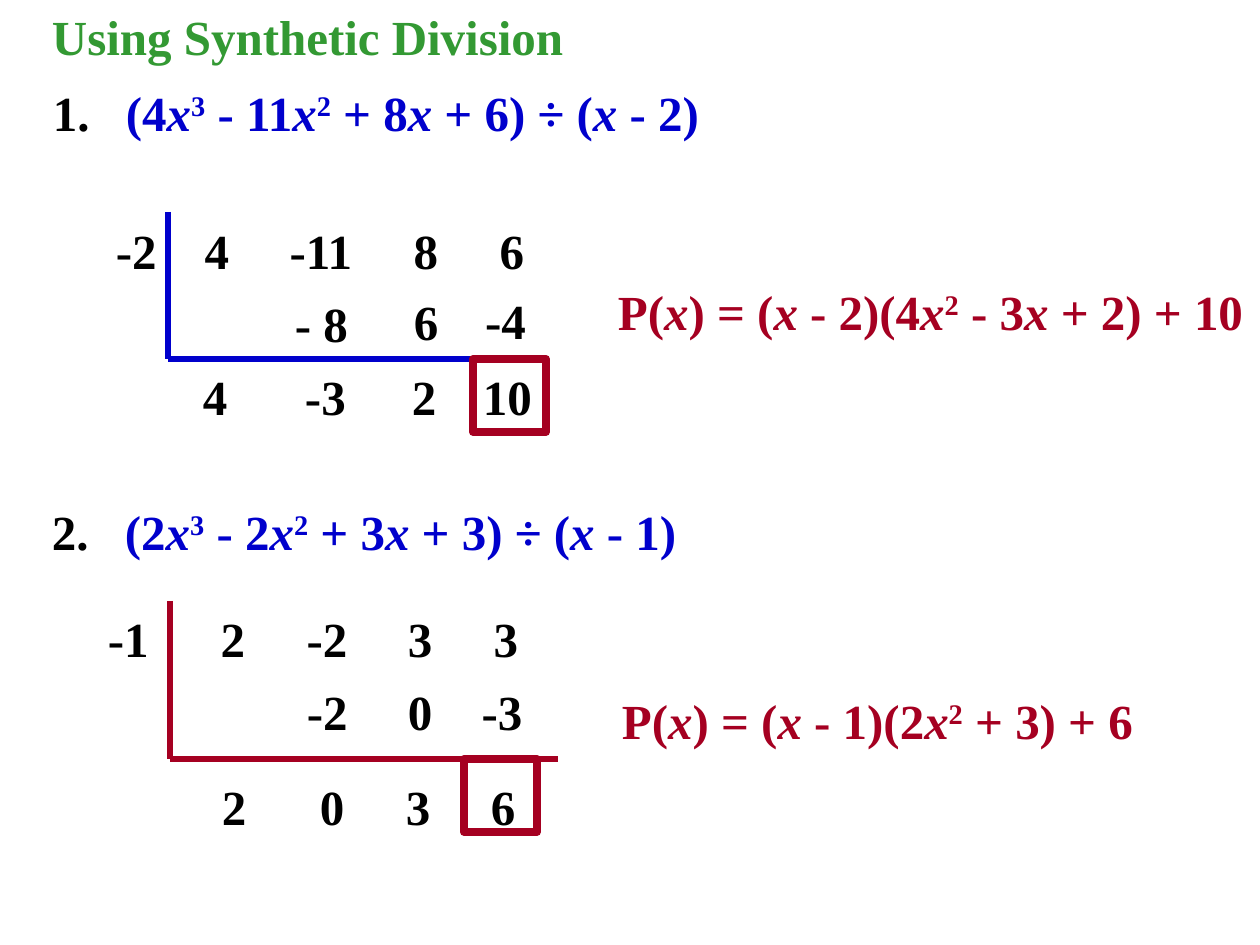
from dataclasses import dataclass
from itertools import groupby
from lxml.etree import SubElement
from pptx import Presentation
from pptx.dml.color import RGBColor
from pptx.enum.shapes import MSO_CONNECTOR, MSO_SHAPE
from pptx.enum.text import MSO_ANCHOR, MSO_AUTO_SIZE, PP_ALIGN
from pptx.oxml.ns import qn
from pptx.util import Pt

SCALE = 914400 / 126  # EMU in one px
PAD = 13              # left inset of text, px
LINE = 72             # height of a one-line text, px
SUPER = {"²": "2", "³": "3"}


@dataclass(frozen=True)
class Theme:
    font: str = "Times New Roman"
    size: int = 28
    black: RGBColor = RGBColor(0x00, 0x00, 0x00)
    blue: RGBColor = RGBColor(0x00, 0x00, 0xCC)
    red: RGBColor = RGBColor(0xA5, 0x00, 0x21)
    green: RGBColor = RGBColor(0x33, 0x99, 0x33)
    rule: float = 3
    frame: float = 4.5


THEME = Theme()


def px(*nums):
    return [round(n * SCALE) for n in nums]


def style(run, color):
    font = run.font
    font.name, font.size, font.bold = THEME.font, Pt(THEME.size), True
    font.color.rgb = color


def setup(frame):
    frame.word_wrap = True
    frame.auto_size = MSO_AUTO_SIZE.NONE
    frame.vertical_anchor = MSO_ANCHOR.TOP
    frame.margin_left, frame.margin_right = px(PAD, 0)
    frame.margin_top = frame.margin_bottom = px(6)[0]


def textbox(slide, left, top, width):
    frame = slide.shapes.add_textbox(*px(left, top, width, LINE)).text_frame
    setup(frame)
    return frame.paragraphs[0]


def add_tabs(para, stops, align):
    tabs = SubElement(para._p.get_or_add_pPr(), qn("a:tabLst"))
    for stop in stops:
        SubElement(tabs, qn("a:tab"), pos=str(px(stop)[0]), algn=align)


def add_math(para, text, color):
    """Set x in italics and raise the powers."""
    def kind(char):
        return "power" if char in SUPER else "var" if char == "x" else "plain"

    for name, chars in groupby(text, kind):
        run = para.add_run()
        run.text = "".join(SUPER.get(char, char) for char in chars)
        style(run, color)
        run.font.italic = name == "var"
        if name == "power":
            run.font._element.set("baseline", "30000")


def add_line(slide, ends, color):
    line = slide.shapes.add_connector(MSO_CONNECTOR.STRAIGHT, *px(*ends))
    line.line.color.rgb = color
    line.line.width = Pt(THEME.rule)
    SubElement(line._element.spPr, qn("a:effectLst"))


def add_title(slide, text, left, top, width):
    title = slide.shapes.title
    title.left, title.top, title.width, title.height = px(left, top, width, LINE)
    frame = title.text_frame
    setup(frame)
    frame.text = text
    para = frame.paragraphs[0]
    para.alignment = PP_ALIGN.LEFT
    para.line_spacing = 1
    para.space_before = Pt(0)
    style(para.runs[0], THEME.green)


def add_task(slide, box, number, text):
    para = textbox(slide, *box)
    add_tabs(para, [73], "l")
    add_math(para, number + "\t", THEME.black)
    add_math(para, text, THEME.blue)


def add_answer(slide, box, text):
    add_math(textbox(slide, *box), text, THEME.red)


def add_row(slide, x, y, row):
    """First value starts the row; the others are centred on their columns."""
    left, top, width, values, *cols = row
    para = textbox(slide, x + left, y + top, width)
    para.text = "\t".join(values.split("|"))
    if cols:
        add_tabs(para, [col - left - PAD for col in cols], "ctr")
    for run in para.runs:
        style(run, THEME.black)


def add_division(slide, box, color, rows, rest):
    """Division bracket, its numbers and the framed remainder."""
    x, y, width, height = box
    foot = y + height
    add_line(slide, (x, y, x, foot), color)
    add_line(slide, (x, foot, x + width, foot), color)
    for row in rows:
        add_row(slide, x, y, row)
    frame = slide.shapes.add_shape(MSO_SHAPE.RECTANGLE, *px(x + rest, foot, 73, 73))
    frame.shadow.inherit = False
    frame.fill.background()
    frame.line.color.rgb = THEME.red
    frame.line.width = Pt(THEME.frame)


# Rows: left, top, width, values, column centres (px from the bracket's corner)
ROWS_1 = [
    (-65, 2, 438, "-2|4|-11|8|6", 49, 153, 258, 344),
    (114, 75, 78, "- 8"), (233, 74, 50, "6"), (304, 72, 67, "-4"),
    (22, 148, 50, "4"), (124, 148, 67, "-3"),
    (231, 148, 50, "2"), (302, 148, 74, "10"),
]
ROWS_2 = [
    (-75, 1, 438, "-1|2|-2|3|3", 63, 157, 250, 336),
    (124, 74, 242, "-2|0|-3", 250, 332),
    (39, 169, 319, "2|0|3|6", 162, 248, 333),
]


def main():
    deck = Presentation()
    deck.slide_width, deck.slide_height = px(1260, 945)
    slide = deck.slides.add_slide(deck.slide_layouts[5])
    add_title(slide, "Using Synthetic Division", 39, 0, 538)

    # First problem
    add_task(slide, (40, 76, 680), "1.", "(4x³ - 11x² + 8x + 6) ÷ (x - 2)")
    add_division(slide, (168, 212, 378, 147), THEME.blue, ROWS_1, 305)
    add_answer(slide, (605, 275, 655), "P(x) = (x - 2)(4x² - 3x + 2) + 10")

    # Second problem
    add_task(slide, (39, 495, 656), "2.", "(2x³ - 2x² + 3x + 3) ÷ (x - 1)")
    add_division(slide, (170, 601, 388, 158), THEME.red, ROWS_2, 294)
    add_answer(slide, (609, 684, 541), "P(x) = (x - 1)(2x² + 3) + 6")
    deck.save("out.pptx")


if __name__ == "__main__":
    main()
